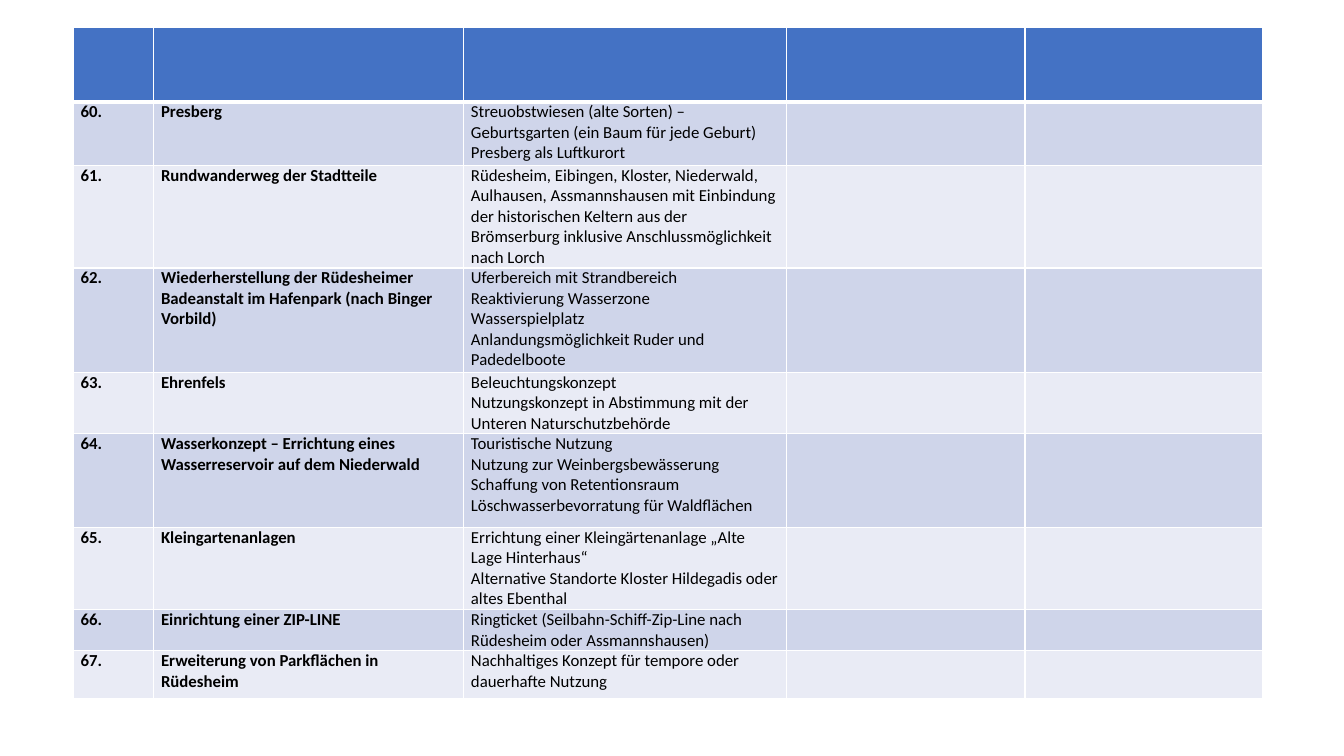
from lxml import etree
from pptx import Presentation
from pptx.dml.color import RGBColor as Rgb
from pptx.oxml.ns import qn
from pptx.util import Cm, Pt

COLORS = {
    "header": "4472C4",
    "band_dark": "CFD5EA",
    "band_light": "E9EBF5",
    "border": "FFFFFF",
    "text": "000000",
}
COLUMN_WIDTHS = [2.03, 7.81, 8.15, 6, 6]
HEADER_HEIGHT = 1.88

# Row height in cm, project title, paragraphs of the description
PROJECTS = [
    (1.6, "Presberg", [
        "Streuobstwiesen (alte Sorten) – Geburtsgarten (ein Baum für jede Geburt)",
        "Presberg als Luftkurort"]),
    (2.58, "Rundwanderweg der Stadtteile", [
        "Rüdesheim, Eibingen, Kloster, Niederwald, Aulhausen, Assmannshausen "
        "mit Einbindung der historischen Keltern aus der Brömserburg "
        "inklusive Anschlussmöglichkeit nach Lorch"]),
    (2.63, "Wiederherstellung der Rüdesheimer Badeanstalt im Hafenpark (nach Binger Vorbild)", [
        "Uferbereich mit Strandbereich",
        "Reaktivierung Wasserzone",
        "Wasserspielplatz",
        "Anlandungsmöglichkeit Ruder und Padedelboote"]),
    (1.55, "Ehrenfels", [
        "Beleuchtungskonzept",
        "Nutzungskonzept in Abstimmung mit der Unteren Naturschutzbehörde"]),
    (2.36, "Wasserkonzept – Errichtung eines Wasserreservoir auf dem Niederwald", [
        "Touristische Nutzung",
        "Nutzung zur Weinbergsbewässerung",
        "Schaffung von Retentionsraum",
        "Löschwasserbevorratung für Waldflächen"]),
    (2.07, "Kleingartenanlagen", [
        "Errichtung einer Kleingärtenanlage „Alte Lage Hinterhaus“",
        "Alternative Standorte Kloster Hildegadis oder altes Ebenthal"]),
    (1.03, "Einrichtung einer ZIP-LINE", [
        "Ringticket (Seilbahn-Schiff-Zip-Line nach Rüdesheim oder Assmannshausen)"]),
    (1.22, "Erweiterung von Parkflächen in Rüdesheim", [
        "Nachhaltiges Konzept für tempore oder dauerhafte Nutzung"]),
]


def style_cell(cell, fill, top=1, bottom=1):
    """Set margins, fill and white borders; top and bottom are widths in points."""
    cell.margin_left = cell.margin_right = Cm(0.19)
    cell.margin_top = cell.margin_bottom = 0
    properties = cell._tc.get_or_add_tcPr()
    for side, width in (("L", 1), ("R", 1), ("T", top), ("B", bottom)):
        line = etree.SubElement(properties, qn(f"a:ln{side}"), w=str(Pt(width)))
        solid = etree.SubElement(line, qn("a:solidFill"))
        etree.SubElement(solid, qn("a:srgbClr"), val=COLORS["border"])
    cell.fill.solid()
    cell.fill.fore_color.rgb = Rgb.from_string(COLORS[fill])


def write_cell(cell, paragraphs, bold=False, size=12, font="Calibri", color="text"):
    frame = cell.text_frame
    for index, text in enumerate(paragraphs):
        para = frame.add_paragraph() if index else frame.paragraphs[0]
        span = para.add_run()
        span.text = text
        span.font.name = font
        span.font.size = Pt(size)
        span.font.bold = bold
        span.font.color.rgb = Rgb.from_string(COLORS[color])


deck = Presentation()
deck.slide_width, deck.slide_height = Cm(33.87), Cm(19.05)
page = deck.slides.add_slide(deck.slide_layouts[6])

row_heights = [HEADER_HEIGHT] + [height for height, _, _ in PROJECTS]
table = page.shapes.add_table(
    len(row_heights), len(COLUMN_WIDTHS), Cm(1.84), Cm(0.69),
    Cm(sum(COLUMN_WIDTHS)), Cm(sum(row_heights))).table
for column, width in zip(table.columns, COLUMN_WIDTHS):
    column.width = Cm(width)
for row, height in zip(table.rows, row_heights):
    row.height = Cm(height)

for cell in table.rows[0].cells:
    style_cell(cell, "header", bottom=3)

for number, (_, title, description) in enumerate(PROJECTS, start=1):
    cells = list(table.rows[number].cells)
    for cell in cells:
        style_cell(cell, "band_dark" if number % 2 else "band_light",
                   top=3 if number == 1 else 1)
    write_cell(cells[0], [f"{number + 59}."], bold=True)
    write_cell(cells[1], [title], bold=True)
    write_cell(cells[2], description)

deck.save("out.pptx")
